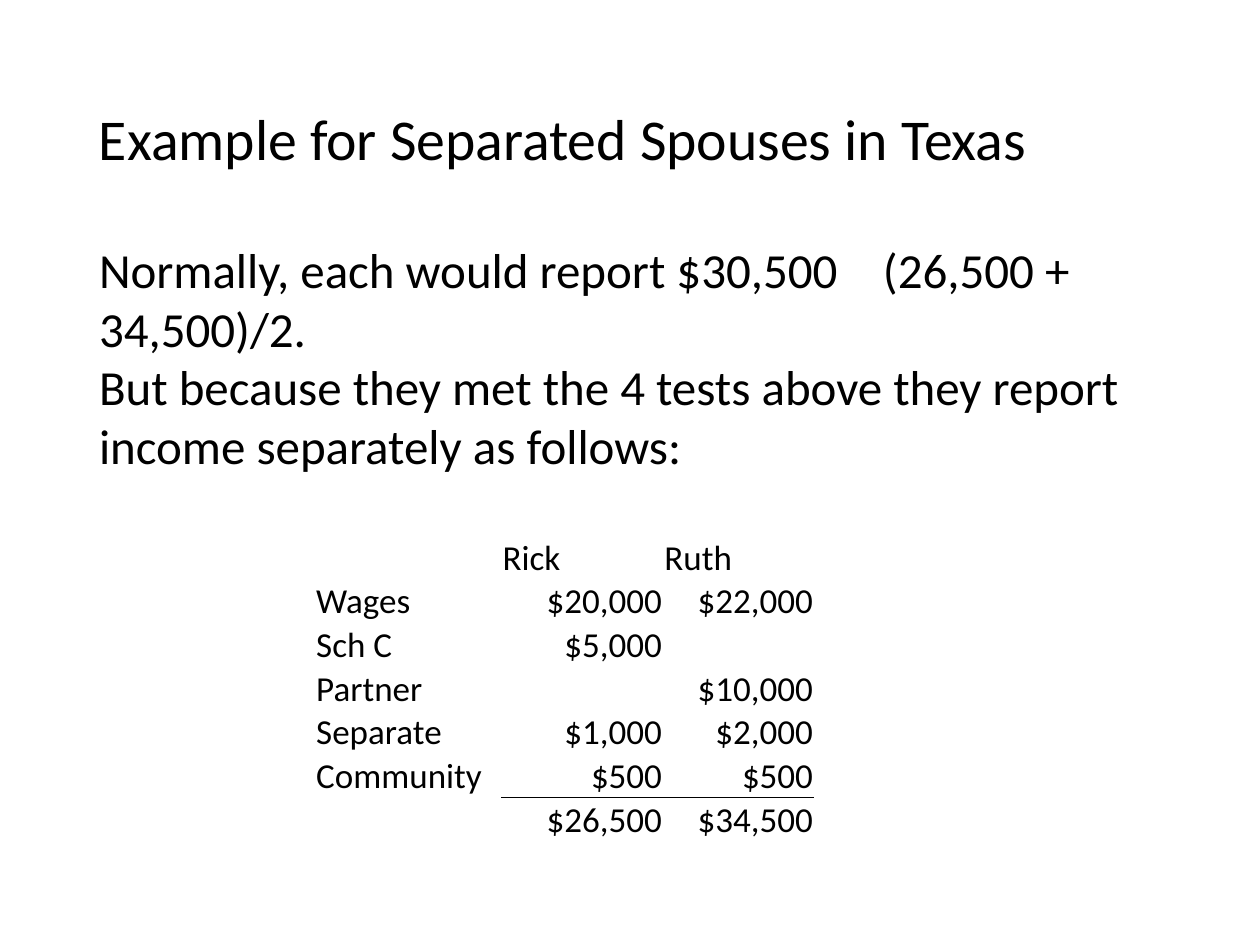
from pptx import Presentation
from pptx.dml.color import RGBColor as Rgb
from pptx.enum.text import MSO_ANCHOR as Anchor, PP_ALIGN as Align
from pptx.oxml import parse_xml
from pptx.oxml.ns import nsdecls
from pptx.util import Pt

INK = "000000"
FONT = "Calibri"
PLAIN = "{2D5ABB26-0587-4C30-8999-92F81FD0307C}"
COLS = [106.5, 92.5, 86.3]
ROW = 25
ROWS = [
    ["", "Rick", "Ruth"],
    ["Wages", "$20,000", "$22,000"],
    ["Sch C", "$5,000", ""],
    ["Partner", "", "$10,000"],
    ["Separate", "$1,000", "$2,000"],
    ["Community", "$500", "$500"],
    ["", "$26,500", "$34,500"],
]
TITLE = "Example for Separated Spouses in Texas"
BODY = [
    "Normally, each would report $30,500\t(26,500 + 34,500)/2.",
    "But because they met the 4 tests above they report income separately as follows:",
]


def color(code):
    """Turn a hex string into a colour."""
    return Rgb.from_string(code)


def style(para, size):
    """Set the font of all runs in a paragraph."""
    for run in para.runs:
        run.font.name = FONT
        run.font.size = Pt(size)
        run.font.color.rgb = color(INK)


def add_text(slide, box, lines, size, anchor=Anchor.TOP, lead=1.0):
    """Add a wrapped text box with one paragraph per line."""
    frame = slide.shapes.add_textbox(*map(Pt, box)).text_frame
    frame.word_wrap = True
    frame.vertical_anchor = anchor
    frame.text = "\n".join(lines)
    for para in frame.paragraphs:
        para.line_spacing = lead
        style(para, size)
    return frame


def add_tab(para, pos):
    """Give a paragraph a left tab stop."""
    props = para._p.get_or_add_pPr()
    props.append(parse_xml(
        f'<a:tabLst {nsdecls("a")}><a:tab pos="{Pt(pos)}" algn="l"/></a:tabLst>'))


def add_rule(cell, side):
    """Draw a thin line on one side of a cell."""
    cell._tc.get_or_add_tcPr().insert(0, parse_xml(
        f'<a:{side} {nsdecls("a")} w="{Pt(0.5)}"><a:solidFill>'
        f'<a:srgbClr val="{INK}"/></a:solidFill></a:{side}>'))


def fill_cell(cell, text, align):
    """Write one bottom-aligned table cell."""
    cell.margin_left = cell.margin_right = cell.margin_top = Pt(0.7)
    cell.margin_bottom = 0
    cell.vertical_anchor = Anchor.BOTTOM
    cell.fill.background()
    para = cell.text_frame.paragraphs[0]
    para.text = text
    para.alignment = align
    style(para, 20)


def add_grid(slide, left, top):
    """Add the income table with a rule above the totals."""
    frame = slide.shapes.add_table(
        len(ROWS), len(COLS), Pt(left), Pt(top), Pt(sum(COLS)), Pt(ROW * len(ROWS)))
    grid = frame.table
    grid.first_row = grid.horz_banding = False
    grid._tbl.tblPr[0].text = PLAIN
    for col, width in zip(grid.columns, COLS):
        col.width = Pt(width)
    for r, row in enumerate(ROWS):
        grid.rows[r].height = Pt(ROW)
        for c, text in enumerate(row):
            fill_cell(grid.cell(r, c), text, Align.RIGHT if r and c else Align.LEFT)
    last = len(ROWS) - 1
    for c in range(1, len(COLS)):
        add_rule(grid.cell(last - 1, c), "lnB")
        add_rule(grid.cell(last, c), "lnT")


def main():
    """Build and save the slide."""
    deck = Presentation()
    deck.slide_width, deck.slide_height = Pt(720), Pt(540)
    slide = deck.slides.add_slide(deck.slide_layouts[6])
    add_text(slide, (49.5, 28.8, 621, 104.4), [TITLE], 33, Anchor.MIDDLE, 0.9)
    add_grid(slide, 180, 306)
    body = add_text(slide, (49.5, 133.2, 658.8, 143.3), BODY, 28)
    add_tab(body.paragraphs[0], 448)
    deck.save("out.pptx")


if __name__ == "__main__":
    main()
